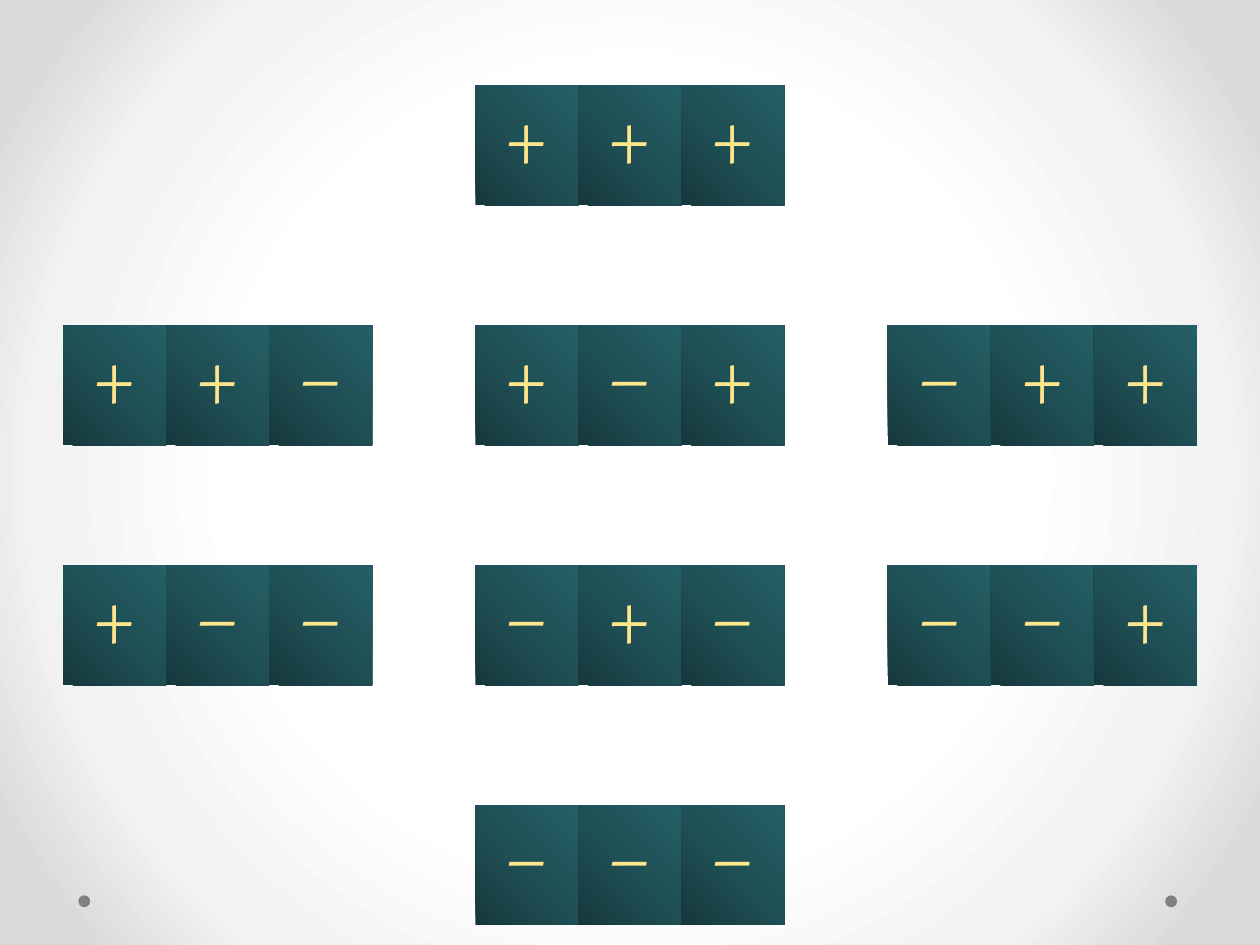
import dataclasses

import lxml.etree
import pptx
import pptx.dml.color
import pptx.enum.shapes
import pptx.enum.text
import pptx.oxml.ns
import pptx.util

Cm = pptx.util.Cm
qn = pptx.oxml.ns.qn


@dataclasses.dataclass(frozen=True)
class Theme:
    font: str = "Vollkorn"
    sign_size: int = 44
    sign: str = "FFE68C"
    dot: str = "808080"
    tile: tuple = ((0, "16383C"), (50, "1F5055"), (100, "245F65"))
    tile_angle: int = 315
    backdrop: tuple = ((50, "FFFFFF"), (76, "F2F2F2"), (92, "D9D9D9"))


THEME = Theme()

# Sign triples by row; "." is an empty cell
SIGN_ROWS = (
    "....+++....",
    "...........",
    "++−.+−+.−++",
    "...........",
    "+−−.−+−.−−+",
    "...........",
    "....−−−....",
)
PLAIN_TABLE_STYLE = "{2D5ABB26-0587-4C30-8999-92F81FD0307C}"


def rgb(value):
    return pptx.dml.color.RGBColor.from_string(value)


def gradient(stops, angle=None):
    """Linear gradient at an angle, or circular from the centre without one."""
    grad = lxml.etree.Element(qn("a:gradFill"), rotWithShape="1")
    stop_list = lxml.etree.SubElement(grad, qn("a:gsLst"))
    for position, color in stops:
        stop = lxml.etree.SubElement(stop_list, qn("a:gs"), pos=str(position * 1000))
        lxml.etree.SubElement(stop, qn("a:srgbClr"), val=color)
    if angle is None:
        circle = lxml.etree.SubElement(grad, qn("a:path"), path="circle")
        lxml.etree.SubElement(circle, qn("a:fillToRect"),
                              l="50000", t="50000", r="50000", b="50000")
    else:
        lxml.etree.SubElement(grad, qn("a:lin"), ang=str(angle * 60000), scaled="0")
    return grad


def replace_solid_fill(parent, grad):
    parent.replace(parent.find(qn("a:solidFill")), grad)


def paint_backdrop(slide):
    slide.background.fill.solid()
    backdrop = next(slide.element.iter(qn("p:bgPr")))
    replace_solid_fill(backdrop, gradient(THEME.backdrop))


def add_dot(slide, left):
    dot = slide.shapes.add_shape(pptx.enum.shapes.MSO_SHAPE.OVAL,
                                 Cm(left), Cm(18.05), Cm(0.24), Cm(0.24))
    dot.shadow.inherit = False
    dot.fill.solid()
    dot.fill.fore_color.rgb = rgb(THEME.dot)
    dot.line.fill.background()


def fill_cell(cell, sign):
    paragraph = cell.text_frame.paragraphs[0]
    if sign == ".":
        cell.fill.background()
        # Empty cells keep the line height of the signs
        end = lxml.etree.SubElement(paragraph._p, qn("a:endParaRPr"),
                                    sz=str(THEME.sign_size * 100))
        lxml.etree.SubElement(end, qn("a:latin"), typeface=THEME.font)
        return
    cell.fill.solid()
    replace_solid_fill(cell._tc.tcPr, gradient(THEME.tile, THEME.tile_angle))
    cell.vertical_anchor = pptx.enum.text.MSO_ANCHOR.MIDDLE
    paragraph.alignment = pptx.enum.text.PP_ALIGN.CENTER
    run = paragraph.add_run()
    run.text = sign
    run.font.name = THEME.font
    run.font.size = pptx.util.Pt(THEME.sign_size)
    run.font.color.rgb = rgb(THEME.sign)


def add_sign_table(slide):
    frame = slide.shapes.add_table(len(SIGN_ROWS), len(SIGN_ROWS[0]),
                                   Cm(1.27), Cm(1.72), Cm(22.86), Cm(15.8))
    signs = frame.table
    signs.first_row = signs.horz_banding = False
    next(frame._element.iter(qn("a:tableStyleId"))).text = PLAIN_TABLE_STYLE
    for row, row_signs in enumerate(SIGN_ROWS):
        for column, sign in enumerate(row_signs):
            fill_cell(signs.cell(row, column), sign)


def main():
    deck = pptx.Presentation()
    deck.slide_width, deck.slide_height = Cm(25.4), Cm(19.05)
    slide = deck.slides.add_slide(deck.slide_layouts[6])

    # Backdrop with its two corner dots
    paint_backdrop(slide)
    for left in (23.49, 1.58):
        add_dot(slide, left)

    # Grid of sign combinations
    add_sign_table(slide)

    deck.save("out.pptx")


if __name__ == "__main__":
    main()
